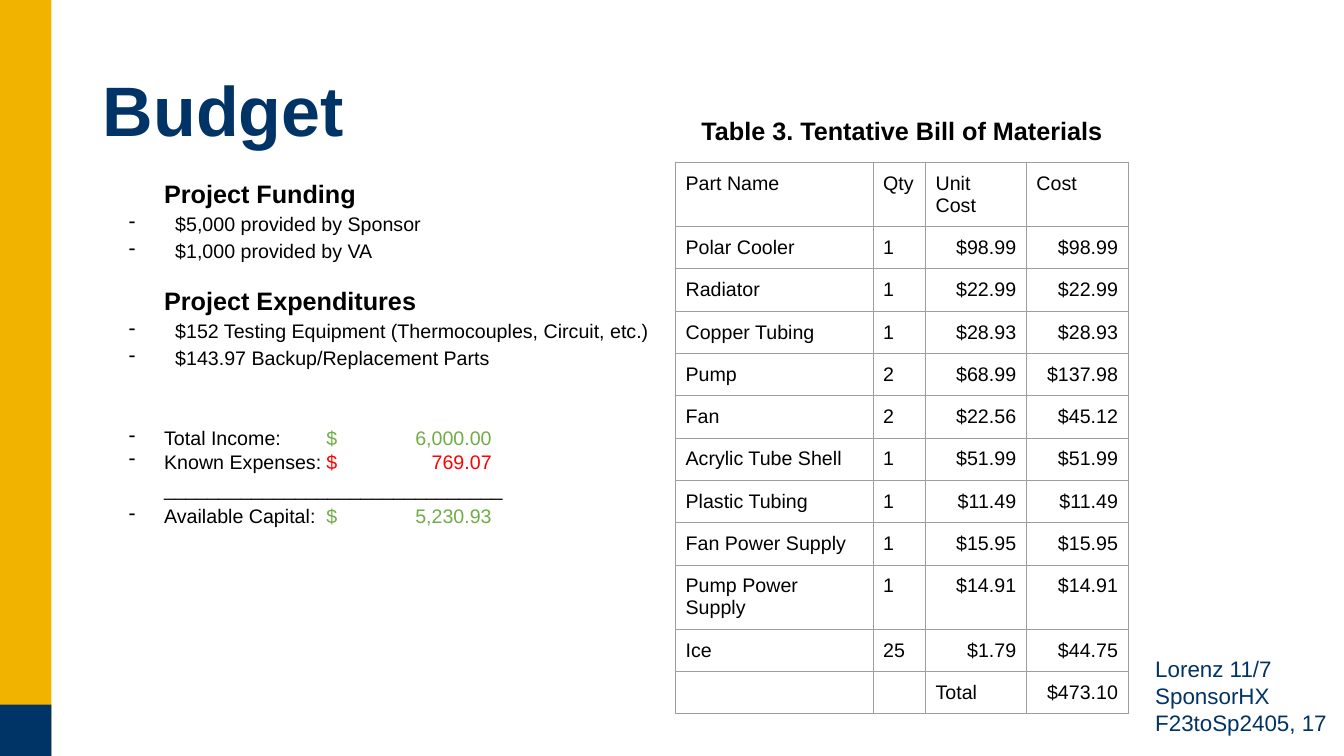
from dataclasses import dataclass

from lxml.etree import SubElement
from pptx import Presentation
from pptx.dml.color import RGBColor
from pptx.enum.shapes import MSO_SHAPE as Shape
from pptx.enum.text import MSO_ANCHOR as Anchor, PP_ALIGN as Align
from pptx.oxml.ns import qn
from pptx.util import Inches, Pt


@dataclass(frozen=True)
class Theme:
    font: str = "Arial"
    gold: str = "F1B300"
    navy: str = "003366"
    black: str = "000000"
    green: str = "70AD47"
    red: str = "FF0000"
    border: str = "9E9E9E"
    title: int = 50
    heading: int = 18
    footer: int = 16
    body: int = 14


THEME = Theme()

PARTS = [
    ("Polar Cooler", 1, 98.99),
    ("Radiator", 1, 22.99),
    ("Copper Tubing", 1, 28.93),
    ("Pump", 2, 68.99),
    ("Fan", 2, 22.56),
    ("Acrylic Tube Shell", 1, 51.99),
    ("Plastic Tubing", 1, 11.49),
    ("Fan Power Supply", 1, 15.95),
    ("Pump Power Supply", 1, 14.91),
    ("Ice", 25, 1.79),
]
SECTIONS = [
    ("Project Funding", ["$5,000 provided by Sponsor", "$1,000 provided by VA"]),
    ("Project Expenditures", [
        "$152 Testing Equipment (Thermocouples, Circuit, etc.)",
        "$143.97 Backup/Replacement Parts",
    ]),
]
INCOME, EXPENSES = 6000, 769.07


def style(font, size, color=THEME.black, bold=False):
    font.name = THEME.font
    font.size = Pt(size)
    font.bold = bold
    font.color.rgb = RGBColor.from_string(color)


def add_text_box(page, left, top, width, height):
    box = page.shapes.add_textbox(
        Inches(left), Inches(top), Inches(width), Inches(height))
    frame = box.text_frame
    frame.word_wrap = True
    frame.margin_left = frame.margin_right = Inches(0.1)
    frame.margin_top = frame.margin_bottom = Inches(0.1)
    return frame


def add_line(frame, text, size, color=THEME.black, bold=False):
    first = frame.paragraphs[0]
    para = first if not first.runs else frame.add_paragraph()
    para.add_run().text = text
    style(para.font, size, color, bold)
    return para


def indent(para, margin, bullet_at=None, tabs=()):
    props = para._p.get_or_add_pPr()
    hanging = 0 if bullet_at is None else bullet_at - margin
    props.set("marL", str(Inches(margin)))
    props.set("indent", str(Inches(hanging)))
    extras = []
    if bullet_at is not None:
        color = SubElement(props, qn("a:buClr"))
        SubElement(color, qn("a:srgbClr"), val=THEME.black)
        extras += [color, SubElement(props, qn("a:buChar"), char="-")]
    if tabs:
        stops = SubElement(props, qn("a:tabLst"))
        for position, side in tabs:
            SubElement(stops, qn("a:tab"), pos=str(Inches(position)), algn=side)
        extras.append(stops)
    defaults = props.find(qn("a:defRPr"))
    for extra in extras:
        defaults.addprevious(extra)


def draw_side_bar(page, left, top, width, height):
    for color, offset in ((THEME.gold, 0), (THEME.navy, height - width)):
        bar = page.shapes.add_shape(
            Shape.RECTANGLE, Inches(left), Inches(top + offset),
            Inches(width), Inches(height - offset))
        bar.shadow.inherit = False
        bar.fill.solid()
        bar.fill.fore_color.rgb = RGBColor.from_string(color)
        bar.line.fill.background()


def draw_title(page, left, top, width, height):
    title = page.shapes.title
    title.left, title.top = Inches(left), Inches(top)
    title.width, title.height = Inches(width), Inches(height)
    title.text_frame.text = "Budget"
    title.text_frame.vertical_anchor = Anchor.MIDDLE
    para = title.text_frame.paragraphs[0]
    para.alignment = Align.LEFT
    para.line_spacing = 0.9
    style(para.font, THEME.title, THEME.navy, True)


def draw_summary(page, left, top, width, height):
    frame = add_text_box(page, left, top, width, height)
    for index, (heading, items) in enumerate(SECTIONS):
        para = add_line(frame, heading, THEME.heading, bold=True)
        indent(para, 0.5)
        if index:
            para.space_before = Pt(16)
        for item in items:
            para = add_line(frame, item, THEME.body)
            para.line_spacing = 1.15
            indent(para, 0.61, 0.15)

    ledger = [
        ("Total Income:", INCOME, THEME.green, 1.15),
        ("Known Expenses:", EXPENSES, THEME.red, 1),
        ("Available Capital:", INCOME - EXPENSES, THEME.green, 1.15),
    ]
    for index, (label, amount, color, spacing) in enumerate(ledger):
        if index == len(ledger) - 1:
            rule = add_line(frame, "_" * 31, THEME.body)
            rule.line_spacing = 1.15
            indent(rule, 0.5)
        para = add_line(frame, label, THEME.body)
        para.line_spacing = spacing
        if index == 0:
            para.space_before = Pt(38)
        indent(para, 0.5, 0.15, ((2.11, "l"), (3.75, "r")))
        span = para.add_run()
        span.text = f"\t$\t{amount:,.2f}"
        span.font.color.rgb = RGBColor.from_string(color)


def draw_caption(page, left, top, width, height):
    frame = add_text_box(page, left, top, width, height)
    para = add_line(frame, "Table 3. Tentative Bill of Materials",
                    THEME.heading, bold=True)
    para.alignment = Align.CENTER


def fill_cell(cell, text, align):
    cell.fill.background()
    cell.margin_left = cell.margin_right = Inches(0.1)
    cell.margin_top = cell.margin_bottom = Inches(0.1)
    para = cell.text_frame.paragraphs[0]
    para.text = text
    para.alignment = align
    style(para.font, THEME.body)
    props = cell._tc.get_or_add_tcPr()
    for position, side in enumerate(("a:lnL", "a:lnR", "a:lnT", "a:lnB")):
        line = SubElement(props, qn(side), w=str(Pt(0.75)))
        solid = SubElement(line, qn("a:solidFill"))
        SubElement(solid, qn("a:srgbClr"), val=THEME.border)
        props.insert(position, line)


def draw_materials(page, left, top, columns, row_height, tall_height):
    rows = [("Part Name", "Qty", "Unit Cost", "Cost")]
    rows += [(name, str(count), f"${price:.2f}", f"${count * price:.2f}")
             for name, count, price in PARTS]
    total = sum(count * price for _, count, price in PARTS)
    rows.append(("", "", "Total", f"${total:.2f}"))
    heights = [tall_height if row[0] in ("Part Name", "Pump Power Supply")
               else row_height for row in rows]
    table = page.shapes.add_table(
        len(rows), len(columns), Inches(left), Inches(top),
        Inches(sum(columns)), Inches(sum(heights))).table
    table.first_row = table.horz_banding = False
    for column, width in zip(table.columns, columns):
        column.width = Inches(width)
    for row, height, values in zip(table.rows, heights, rows):
        row.height = Inches(height)
        for cell, value in zip(row.cells, values):
            align = Align.RIGHT if value.startswith("$") else Align.LEFT
            fill_cell(cell, value, align)


def draw_footer(page, left, top, width, height):
    frame = add_text_box(page, left, top, width, height)
    add_line(frame, "Lorenz 11/7 SponsorHX F23toSp2405, 17",
             THEME.footer, THEME.navy)


def main():
    deck = Presentation()
    deck.slide_width, deck.slide_height = Inches(13.33), Inches(7.5)
    page = deck.slides.add_slide(deck.slide_layouts[5])
    draw_side_bar(page, 0, 0, 0.51, 7.5)
    draw_title(page, 0.92, 0.4, 11.5, 1.45)
    draw_materials(page, 6.7, 1.61, (1.96, 0.52, 1, 1.01), 0.42, 0.63)
    draw_summary(page, 1.03, 1.67, 5.64, 5.14)
    draw_caption(page, 6.7, 1.04, 4.49, 0.55)
    draw_footer(page, 11.36, 6.4, 1.97, 1.05)
    deck.save("out.pptx")


if __name__ == "__main__":
    main()
